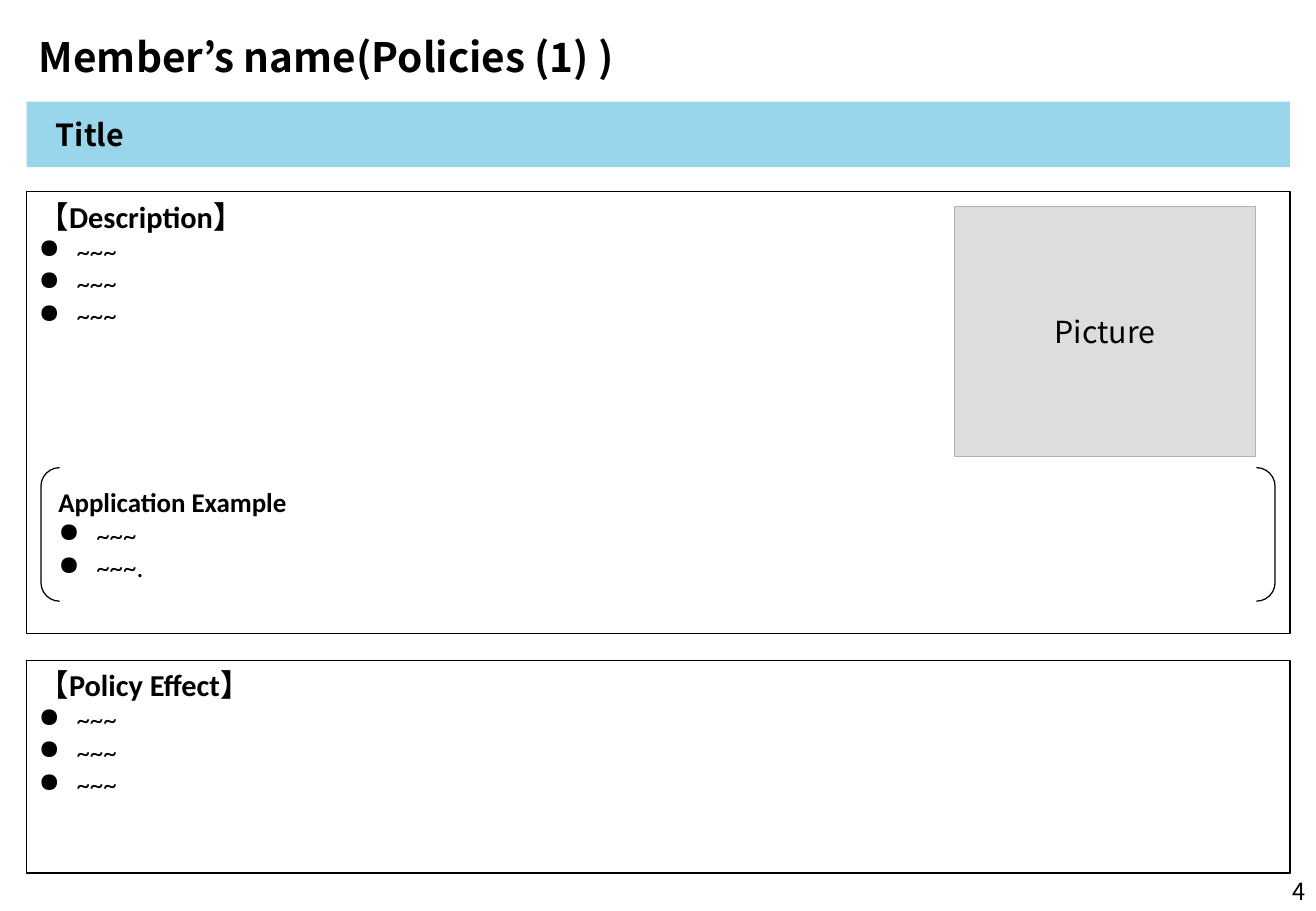
from lxml import etree
from pptx import Presentation
from pptx.dml.color import RGBColor
from pptx.enum import shapes, text
from pptx.oxml import ns
from pptx.util import Pt

BLACK = RGBColor(0x00, 0x00, 0x00)
BLUE = RGBColor(0x99, 0xD6, 0xEC)
GREY = RGBColor(0xDD, 0xDD, 0xDD)
EDGE = RGBColor(0xB2, 0xB2, 0xB2)
NOTO = "Noto Sans CJK JP"
CALIBRI = "Calibri"
LEFT, WIDTH = 15.84, 748.8
INDENT = 22.5


def add_text(tf, line, size, font, bold=False, align=text.PP_ALIGN.LEFT, bullet=False, space=0):
    p = tf.paragraphs[0]
    if p.runs:
        p = tf.add_paragraph()
    p.alignment = align
    p.space_before = p.space_after = Pt(space)
    r = p.add_run()
    r.text = line
    r.font.size = Pt(size)
    r.font.name = font
    r.font.bold = bold
    r.font.color.rgb = BLACK
    etree.SubElement(r.font._element, ns.qn("a:ea")).set("typeface", font)
    if bullet:
        ppr = p._p.get_or_add_pPr()
        ppr.set("marL", str(Pt(INDENT)))
        ppr.set("indent", str(-Pt(INDENT)))
        etree.SubElement(ppr, ns.qn("a:buChar")).set("char", "●")


def add_box(kind, x, y, w, h, fill=None, line=None, anchor=text.MSO_ANCHOR.TOP):
    sp = s.shapes.add_shape(kind, Pt(x), Pt(y), Pt(w), Pt(h))
    sp.shadow.inherit = False
    if fill is None:
        sp.fill.background()
    else:
        sp.fill.solid()
        sp.fill.fore_color.rgb = fill
    if line is None:
        sp.line.fill.background()
    else:
        sp.line.color.rgb = line
        sp.line.width = Pt(0.75)
    sp.text_frame.word_wrap = True
    sp.text_frame.vertical_anchor = anchor
    return sp


prs = Presentation()
prs.slide_width, prs.slide_height = Pt(780), Pt(540)
s = prs.slides.add_slide(prs.slide_layouts[5])
RECT = shapes.MSO_SHAPE.RECTANGLE
MIDDLE = text.MSO_ANCHOR.MIDDLE

title = s.shapes.title
title.left, title.top, title.width, title.height = Pt(LEFT), Pt(15.12), Pt(WIDTH), Pt(36)
title.text_frame.vertical_anchor = MIDDLE
add_text(title.text_frame, "Member’s name(Policies (1) )", 24, NOTO, bold=True)

banner = add_box(RECT, LEFT, 60.3, WIDTH, 38.9, fill=BLUE)
tf = banner.text_frame
tf.margin_left = tf.margin_right = Pt(17.28)
tf.margin_top = tf.margin_bottom = Pt(8.64)
tf.vertical_anchor = MIDDLE
add_text(tf, "Title", 18, NOTO, bold=True)

for heading, top, height in [("【Description】", 113.6, 262), ("【Policy Effect】", 391.5, 126)]:
    panel = add_box(RECT, LEFT, top, WIDTH, height, line=BLACK)
    add_text(panel.text_frame, heading, 18, CALIBRI, bold=True)
    for _ in range(3):
        add_text(panel.text_frame, "~~~", 16, CALIBRI, bullet=True)

frame = add_box(RECT, 565.7, 122.5, 178.6, 148, fill=GREY, line=EDGE, anchor=MIDDLE)
frame.text_frame.word_wrap = False
add_text(frame.text_frame, "Picture", 18, NOTO, align=text.PP_ALIGN.CENTER)

example = add_box(shapes.MSO_SHAPE.DOUBLE_BRACKET, 24.3, 277.2, 731.5, 79.2, line=BLACK, anchor=MIDDLE)
example.adjustments[0] = 0.14
add_text(example.text_frame, "Application Example", 16, CALIBRI, bold=True)
for item in ("~~~", "~~~."):
    add_text(example.text_frame, item, 16, CALIBRI, align=text.PP_ALIGN.JUSTIFY, bullet=True)

number = s.shapes.add_textbox(Pt(599), Pt(514), Pt(182), Pt(28.8))
number.text_frame.word_wrap = True
number.text_frame.vertical_anchor = MIDDLE
add_text(number.text_frame, "4", 14, NOTO, align=text.PP_ALIGN.RIGHT)

prs.save("out.pptx")
